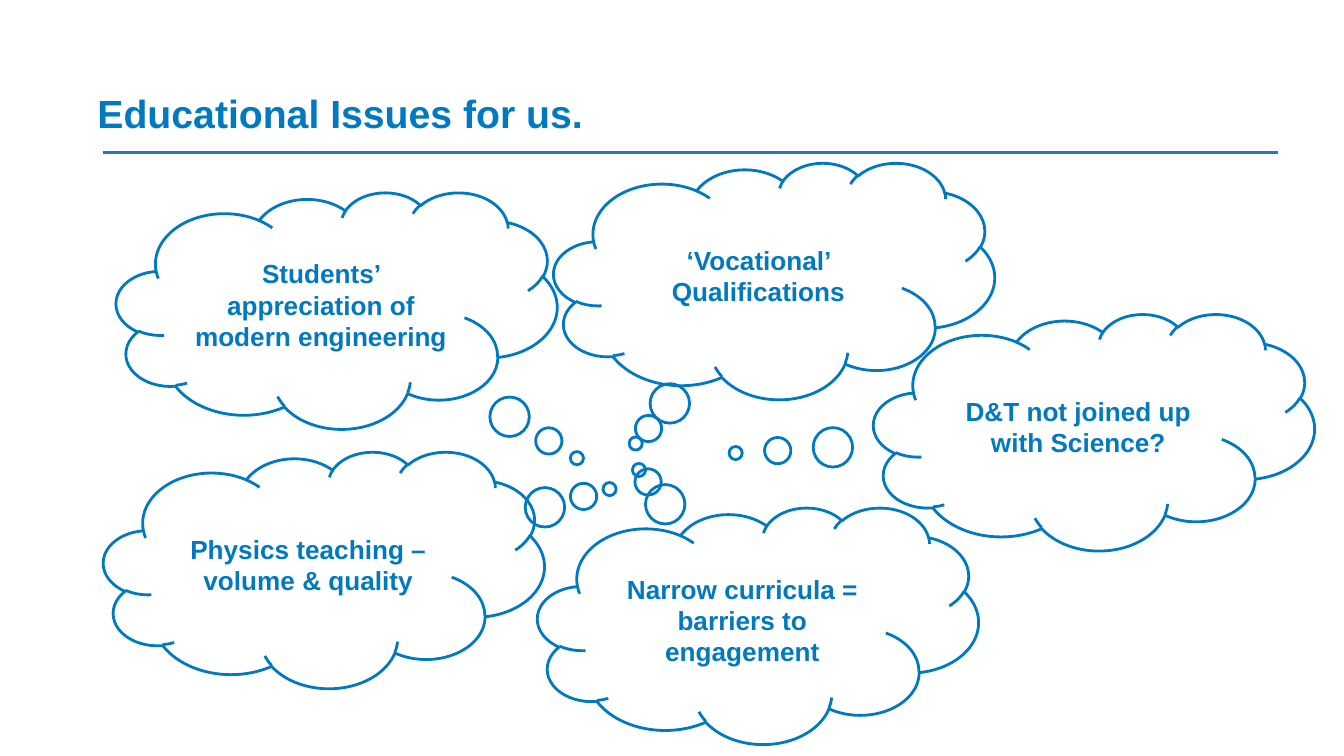
from dataclasses import dataclass

from lxml.etree import SubElement
from pptx import Presentation
from pptx.dml.color import RGBColor
from pptx.enum.shapes import MSO_CONNECTOR as Connector, MSO_SHAPE as Shape
from pptx.enum.text import MSO_ANCHOR as Anchor, MSO_AUTO_SIZE as AutoSize, PP_ALIGN as Align
from pptx.oxml.ns import qn
from pptx.util import Emu, Pt

EMU_PER_PX = 4572  # 200 px to the inch
TITLE_ONLY = 5
CLOUD_SIZE = (656, 352)


@dataclass(frozen=True)
class Theme:
    font: str = "Arial"
    blue: RGBColor = RGBColor(0x00, 0x79, 0xC1)
    rule: RGBColor = RGBColor(0x24, 0x78, 0xC0)
    title_size: int = 21
    cloud_size: int = 14
    line_width: float = 1.5


def px(*lengths):
    return [Emu(length * EMU_PER_PX) for length in lengths]


def write_text(frame, text, *, font, size, color, align, anchor, fit=AutoSize.NONE):
    frame.text = text
    frame.word_wrap = True
    frame.auto_size = fit
    frame.vertical_anchor = anchor
    frame.margin_left, frame.margin_top, frame.margin_right, frame.margin_bottom = px(14, 8, 14, 8)
    paragraph = frame.paragraphs[0]
    paragraph.alignment = align
    for run in paragraph.runs:
        run.font.name = font
        run.font.size = Pt(size)
        run.font.bold = True
        run.font.color.rgb = color


class SlideBuilder:
    """Draws styled elements on one slide."""

    def __init__(self, slide, theme):
        self.slide = slide
        self.theme = theme

    def outline(self, line, color):
        line.color.rgb = color
        line.width = Pt(self.theme.line_width)

    def title(self, text, left, top, width, height):
        title = self.slide.shapes.title
        title.left, title.top, title.width, title.height = px(left, top, width, height)
        write_text(title.text_frame, text, font=self.theme.font, size=self.theme.title_size,
                   color=self.theme.blue, align=Align.LEFT, anchor=Anchor.BOTTOM,
                   fit=AutoSize.SHAPE_TO_FIT_TEXT)

    def rule(self, *ends):
        connector = self.slide.shapes.add_connector(Connector.STRAIGHT, *px(*ends))
        self.outline(connector.line, self.theme.rule)
        SubElement(connector._element.spPr, qn("a:effectLst"))

    def thought(self, text, left, top, tail):
        """Add a cloud whose tail is offset from its centre, in parts of its size."""
        cloud = self.slide.shapes.add_shape(Shape.CLOUD_CALLOUT, *px(left, top, *CLOUD_SIZE))
        cloud.adjustments[0], cloud.adjustments[1] = tail
        cloud.shadow.inherit = False
        cloud.fill.background()
        self.outline(cloud.line, self.theme.blue)
        write_text(cloud.text_frame, text, font=self.theme.font, size=self.theme.cloud_size,
                   color=self.theme.blue, align=Align.CENTER, anchor=Anchor.MIDDLE)


THOUGHTS = [
    ("Students’ appreciation of modern engineering", 173, 286, (0.545, 0.625)),
    ("‘Vocational’ Qualifications", 824, 242, (-0.314, 0.688)),
    ("Physics teaching – volume & quality", 154, 672, (0.648, -0.341)),
    ("Narrow curricula = barriers to engagement", 800, 755, (-0.27, -0.658)),
    ("D&T not joined up with Science?", 1300, 467, (-0.813, 0.089)),
]


def main():
    presentation = Presentation()
    presentation.slide_width, presentation.slide_height = px(2000, 1125)
    slide = presentation.slides.add_slide(presentation.slide_layouts[TITLE_ONLY])
    builder = SlideBuilder(slide, Theme())
    builder.rule(154, 227, 1902, 227)
    builder.title("Educational Issues for us.", 131, 125, 1398, 86)
    for text, left, top, tail in THOUGHTS:
        builder.thought(text, left, top, tail)
    presentation.save("out.pptx")


if __name__ == "__main__":
    main()
